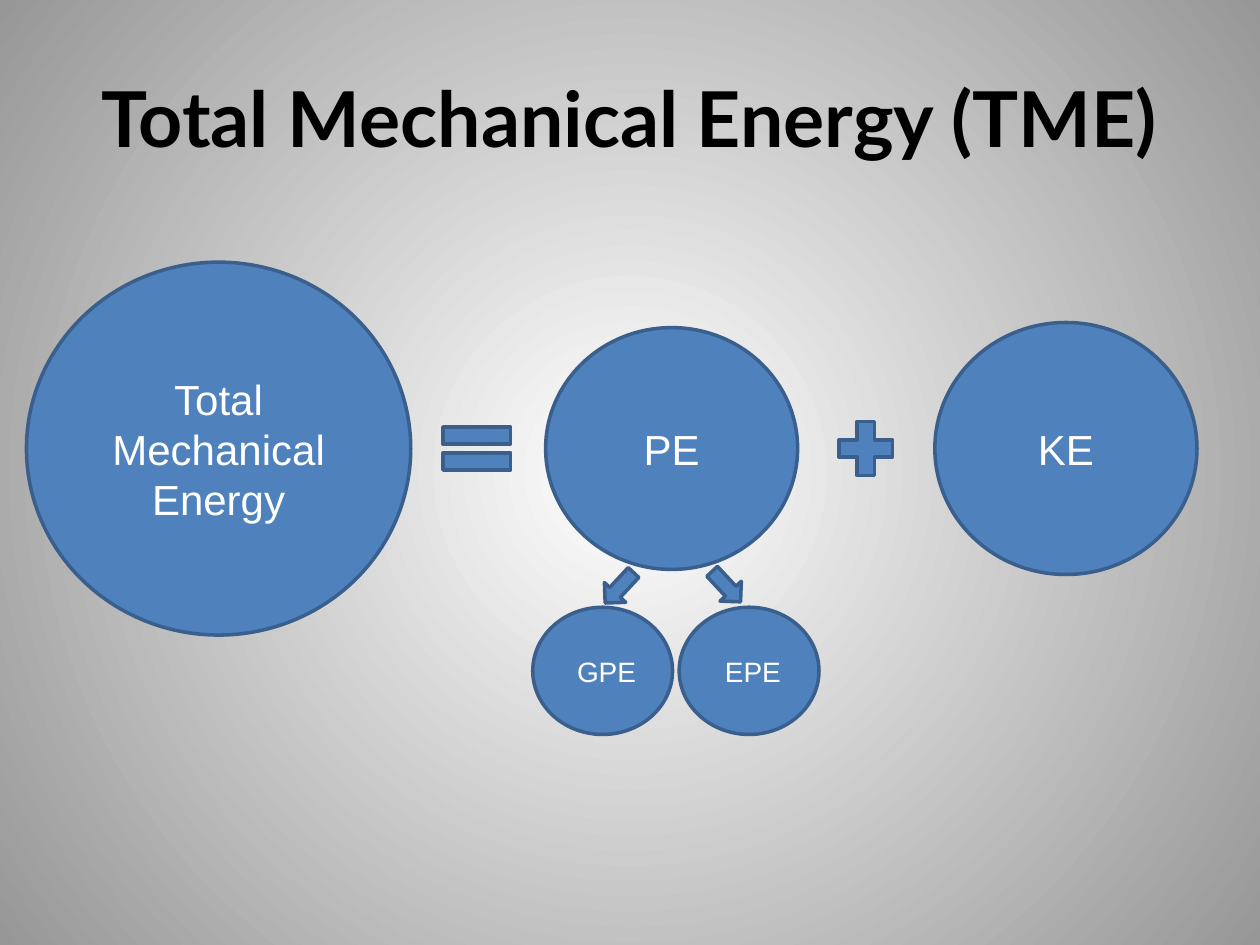
from lxml import etree
from pptx import Presentation
from pptx.dml.color import RGBColor
from pptx.enum.shapes import MSO_SHAPE
from pptx.enum.text import MSO_ANCHOR, PP_ALIGN
from pptx.oxml.ns import qn
from pptx.util import Pt

OVAL = MSO_SHAPE.OVAL
DOWN_ARROW = MSO_SHAPE.DOWN_ARROW
PLUS = MSO_SHAPE.MATH_PLUS
EQUAL = MSO_SHAPE.MATH_EQUAL
MIDDLE = MSO_ANCHOR.MIDDLE
CENTER = PP_ALIGN.CENTER


def color(value):
    return RGBColor.from_string(value)


def write_text(shape, text, size=24, font="Arial", fill="FFFFFF", bold=False):
    frame = shape.text_frame
    frame.word_wrap = True
    frame.vertical_anchor = MIDDLE
    paragraph = frame.paragraphs[0]
    paragraph.alignment = CENTER
    run = paragraph.add_run()
    run.text = text
    run.font.size = Pt(size)
    run.font.name = font
    run.font.bold = bold
    run.font.color.rgb = color(fill)


presentation = Presentation()
presentation.slide_width = Pt(720)
presentation.slide_height = Pt(540)
slide = presentation.slides.add_slide(presentation.slide_layouts[6])

background = slide.background.fill
background.gradient()
for stop, value in zip(background.gradient_stops, ("FFFFFF", "979797")):
    stop.color.rgb = color(value)
gradient = slide.element.find(".//" + qn("a:gradFill"))
linear = gradient.find(qn("a:lin"))
radial = etree.Element(qn("a:path"), {"path": "circle"})
etree.SubElement(radial, qn("a:fillToRect"), {side: "50000" for side in "ltrb"})
gradient.replace(linear, radial)

title = slide.shapes.add_textbox(Pt(36), Pt(21.6), Pt(648), Pt(90))
write_text(title, "Total Mechanical Energy (TME)", size=44, font="Lato", fill="000000", bold=True)

diagram = [
    (OVAL, 311.8, 187.2, 144, 138.2, 0, "PE", 24),
    (OVAL, 534.2, 184.3, 149.8, 144, 0, "KE", 24),
    (DOWN_ARROW, 345.6, 324, 16.6, 23.8, 43, "", 0),
    (OVAL, 304.4, 347, 79.9, 72.7, 0, " GPE", 16),
    (OVAL, 388.1, 347, 79.9, 72.7, 0, " EPE", 16),
    (DOWN_ARROW, 406.8, 323.3, 16.6, 23.8, 317, "", 0),
    (PLUS, 473.8, 235.4, 41.8, 41.8, 0, "", 0),
    (OVAL, 15.1, 149.8, 219.6, 213.1, 0, "Total Mechanical Energy", 24),
    (EQUAL, 246.2, 235.4, 52.6, 41.8, 0, "", 0),
]
for kind, left, top, width, height, rotation, text, size in diagram:
    shape = slide.shapes.add_shape(kind, Pt(left), Pt(top), Pt(width), Pt(height))
    shape.rotation = rotation
    shape.shadow.inherit = False
    shape.fill.solid()
    shape.fill.fore_color.rgb = color("4F81BD")
    shape.line.color.rgb = color("3A5F8C")
    shape.line.width = Pt(2)
    if text:
        write_text(shape, text, size=size)

presentation.save("out.pptx")
